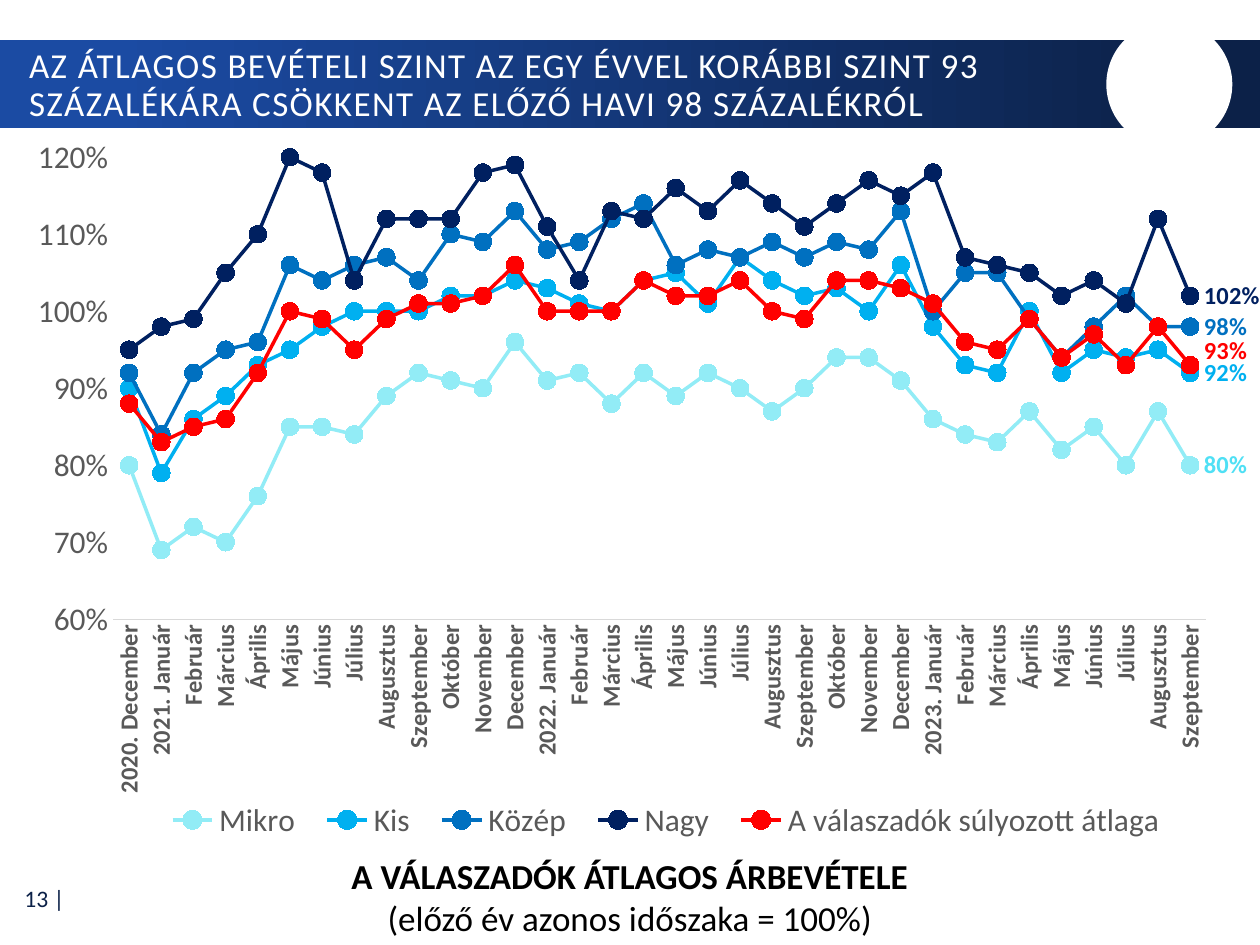
import pptx
import pptx.util
import pptx.chart.data
import pptx.dml.color
import pptx.enum.chart
import pptx.enum.shapes
import pptx.enum.text
import pptx.oxml

Pt = pptx.util.Pt
Align = pptx.enum.text.PP_ALIGN
Anchor = pptx.enum.text.MSO_ANCHOR
Shape = pptx.enum.shapes.MSO_SHAPE
Kind = pptx.enum.chart

FONT = "Calibri"
COLORS = {
    "white": "FFFFFF", "black": "000000", "navy": "0C2148", "royal": "1B4BA3",
    "gray": "595959", "rule": "D9D9D9", "pale": "92ECF6", "aqua": "4FE0F5",
    "sky": "00B0F0", "blue": "0070C0", "dark": "002060", "red": "FF0000",
}
TITLE = ("AZ ÁTLAGOS BEVÉTELI SZINT AZ EGY ÉVVEL KORÁBBI SZINT 93 "
         "SZÁZALÉKÁRA CSÖKKENT AZ ELŐZŐ HAVI 98 SZÁZALÉKRÓL")
NOTES = [("A VÁLASZADÓK ÁTLAGOS ÁRBEVÉTELE", True),
         ("(előző év azonos időszaka = 100%)", False)]
PAGE = "13 |"
MONTHS = ["Január", "Február", "Március", "Április", "Május", "Június", "Július",
          "Augusztus", "Szeptember", "Október", "November", "December"]
YEARS = [(2020, 12, 12), (2021, 1, 12), (2022, 1, 12), (2023, 1, 9)]
SERIES = [
    ("Mikro", "pale", "aqua",
     [80, 69, 72, 70, 76, 85, 85, 84, 89, 92, 91, 90, 96, 91, 92, 88, 92,
      89, 92, 90, 87, 90, 94, 94, 91, 86, 84, 83, 87, 82, 85, 80, 87, 80]),
    ("Kis", "sky", "sky",
     [90, 79, 86, 89, 93, 95, 98, 100, 100, 100, 102, 102, 104, 103, 101, 100, 104,
      105, 101, 107, 104, 102, 103, 100, 106, 98, 93, 92, 100, 92, 95, 94, 95, 92]),
    ("Közép", "blue", "blue",
     [92, 84, 92, 95, 96, 106, 104, 106, 107, 104, 110, 109, 113, 108, 109, 112, 114,
      106, 108, 107, 109, 107, 109, 108, 113, 100, 105, 105, 99, 94, 98, 102, 98, 98]),
    ("Nagy", "dark", "dark",
     [95, 98, 99, 105, 110, 120, 118, 104, 112, 112, 112, 118, 119, 111, 104, 113, 112,
      116, 113, 117, 114, 111, 114, 117, 115, 118, 107, 106, 105, 102, 104, 101, 112, 102]),
    ("A válaszadók súlyozott átlaga", "red", "red",
     [88, 83, 85, 86, 92, 100, 99, 95, 99, 101, 101, 102, 106, 100, 100, 100, 104,
      102, 102, 104, 100, 99, 104, 104, 103, 101, 96, 95, 99, 94, 97, 93, 98, 93]),
]
PLOT = {"x": 0.09, "y": 0.04, "w": 0.87, "h": 0.64}
LEGEND = {"x": 0.12, "y": 0.93, "w": 0.82, "h": 0.06}
SHIFT = {"red": {"x": 0, "y": -0.02}}


def rgb(name):
    return pptx.dml.color.RGBColor.from_string(COLORS[name])


def style(font, size, color, bold=False):
    font.name, font.size, font.bold = FONT, Pt(size), bold
    font.color.rgb = rgb(color)


def place(owner, index, spots, edge=False, inner=False):
    for old in owner.findall("{*}layout"):
        owner.remove(old)
    ns = "http://schemas.openxmlformats.org/drawingml/2006/chart"
    target = '<c:layoutTarget val="inner"/>' if inner else ""
    modes = '<c:xMode val="edge"/><c:yMode val="edge"/>' if edge else ""
    parts = "".join(f'<c:{key} val="{val}"/>' for key, val in spots.items())
    owner.insert(index, pptx.oxml.parse_xml(
        f'<c:layout xmlns:c="{ns}"><c:manualLayout>{target}{modes}{parts}'
        '</c:manualLayout></c:layout>'))


def add_form(slide, kind, box):
    form = slide.shapes.add_shape(kind, *map(Pt, box))
    form.shadow.inherit = False
    form.line.fill.background()
    return form


def add_band(slide):
    band = add_form(slide, Shape.RECTANGLE, (0, 23, 720, 50.4))
    band.fill.gradient()
    band.fill.gradient_angle = 0
    stops = zip(band.fill.gradient_stops, [(0.09, "royal"), (0.95, "navy")])
    for stop, (spot, color) in stops:
        stop.position = spot
        stop.color.rgb = rgb(color)
    disc = add_form(slide, Shape.OVAL, (632.2, 12.2, 72, 72))
    disc.fill.solid()
    disc.fill.fore_color.rgb = rgb("white")


def add_title(slide):
    title = slide.shapes.title
    title.left, title.top, title.width, title.height = map(Pt, (9.4, 25.2, 627.8, 48.2))
    frame = title.text_frame
    frame.text = TITLE
    frame.word_wrap = True
    frame.auto_size = pptx.enum.text.MSO_AUTO_SIZE.NONE
    frame.vertical_anchor = Anchor.MIDDLE
    para = frame.paragraphs[0]
    para.alignment, para.line_spacing = Align.LEFT, 0.9
    style(para.font, 20, "white")
    para.runs[0].font._element.set("spc", "80")
    title.element.getparent().append(title.element)


def add_text(slide, box, lines, size, color, align, anchor):
    frame = slide.shapes.add_textbox(*map(Pt, box)).text_frame
    frame.word_wrap = True
    frame.vertical_anchor = anchor
    for pos, (text, bold) in enumerate(lines):
        para = frame.add_paragraph() if pos else frame.paragraphs[0]
        para.text, para.alignment = text, align
        style(para.font, size, color, bold)


def add_lines(slide):
    data = pptx.chart.data.CategoryChartData(number_format="0%")
    data.categories = [
        f"{year}. {MONTHS[num - 1]}" if num == first else MONTHS[num - 1]
        for year, first, last in YEARS for num in range(first, last + 1)]
    for name, _, _, vals in SERIES:
        data.add_series(name, [val / 100 for val in vals])
    chart = slide.shapes.add_chart(
        Kind.XL_CHART_TYPE.LINE_MARKERS, *map(Pt, (0, 73.4, 720, 412.6)), data).chart
    style(chart.font, 18, "black")
    chart.has_title = False
    chart.has_legend = True
    chart.legend.position = Kind.XL_LEGEND_POSITION.BOTTOM
    chart.legend.include_in_layout = False
    style(chart.legend.font, 18, "gray")
    place(chart.legend._element, 1, LEGEND, edge=True)
    place(chart._chartSpace.chart.plotArea, 0, PLOT, edge=True, inner=True)
    set_axes(chart)
    chart.plots[0].vary_by_categories = False
    for line, (_, color, tint, vals) in zip(chart.plots[0].series, SERIES):
        paint(line, color, tint, len(vals) - 1)


def set_axes(chart):
    cat, val = chart.category_axis, chart.value_axis
    for axis, size, bold in ((cat, 14, True), (val, 18, False)):
        axis.has_major_gridlines = False
        axis.major_tick_mark = axis.minor_tick_mark = Kind.XL_TICK_MARK.NONE
        style(axis.tick_labels.font, size, "gray", bold)
    cat.format.line.color.rgb = rgb("rule")
    cat.format.line.width = Pt(0.75)
    body = cat._element.txPr.bodyPr
    body.set("rot", "-5400000")
    body.set("vert", "horz")
    val.minimum_scale, val.maximum_scale, val.major_unit = 0.6, 1.2, 0.1
    val.tick_labels.number_format = "0%"
    val.tick_labels.number_format_is_linked = False
    val.format.line.fill.background()


def paint(line, color, tint, last):
    line.smooth = False
    line.format.line.color.rgb = rgb(color)
    line.format.line.width = Pt(2)
    mark = line.marker
    mark.style, mark.size = Kind.XL_MARKER_STYLE.CIRCLE, 10
    mark.format.fill.solid()
    mark.format.fill.fore_color.rgb = rgb(color)
    mark.format.line.color.rgb = rgb(color)
    label = line.points[last].data_label
    style(label.font, 14, tint, True)
    label.position = Kind.XL_LABEL_POSITION.RIGHT
    if color in SHIFT:
        place(label._get_or_add_dLbl(), 1, SHIFT[color])


def main():
    deck = pptx.Presentation()
    deck.slide_width, deck.slide_height = Pt(720), Pt(540)
    slide = deck.slides.add_slide(deck.slide_layouts[5])
    add_text(slide, (0.7, 499.7, 43.2, 26.6), [(PAGE, False)], 13.5, "navy",
             Align.RIGHT, Anchor.MIDDLE)
    add_band(slide)
    add_title(slide)
    add_text(slide, (69.8, 484.6, 580.3, 80), NOTES, 20, "black",
             Align.CENTER, Anchor.TOP)
    add_lines(slide)
    deck.save("out.pptx")


if __name__ == "__main__":
    main()
